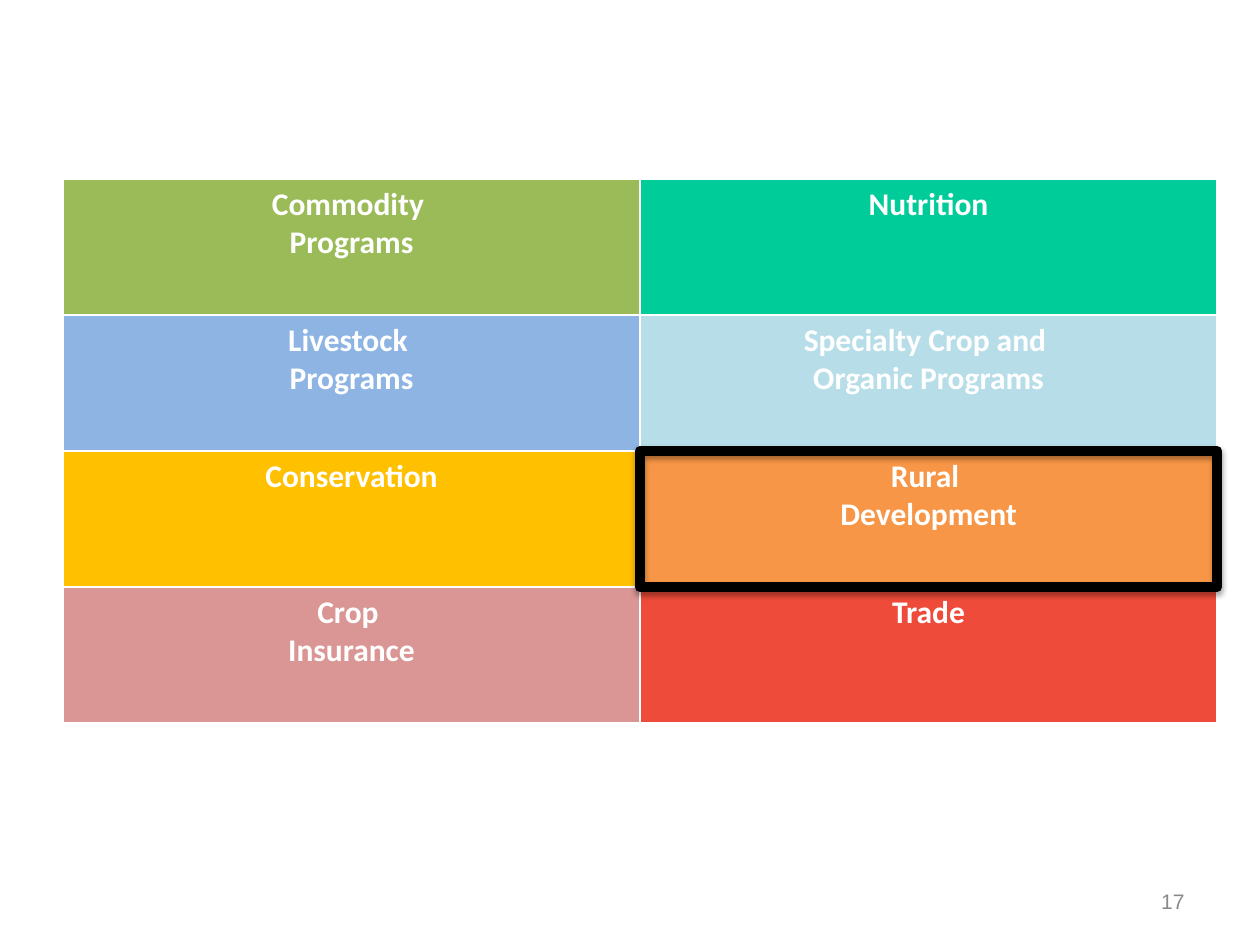
from lxml import etree
from pptx import Presentation
from pptx import util as u
from pptx.dml.color import RGBColor
from pptx.enum import shapes, text
from pptx.oxml import ns

COLORS = {
    "commodity": "9BBB59", "nutrition": "00CC99",
    "livestock": "8EB4E3", "specialty": "B7DEE8",
    "conservation": "FFC000", "rural": "F79646",
    "insurance": "D99694", "trade": "EE4B3A",
    "label": "FFFFFF", "highlight": "000000", "number": "898989",
}
PROGRAMS = [
    [("Commodity \nPrograms", "commodity"), ("Nutrition", "nutrition")],
    [("Livestock \nPrograms", "livestock"),
     ("Specialty Crop and \nOrganic Programs", "specialty")],
    [("Conservation", "conservation"), ("Rural \nDevelopment", "rural")],
    [("Crop \nInsurance", "insurance"), ("Trade", "trade")],
]
LEFT, TOP = u.Inches(0.5), u.Inches(1.42)
CELL_WIDTH, CELL_HEIGHT = u.Inches(4.58), u.Inches(1.08)


def color(name):
    """Return the named colour."""
    return RGBColor.from_string(COLORS[name])


def format_text(frame, font_name, size, color_name, align, bold=False):
    """Format every paragraph of a text frame alike."""
    for paragraph in frame.paragraphs:
        paragraph.alignment = align
        for run in paragraph.runs:
            run.font.name = font_name
            run.font.size = u.Pt(size)
            run.font.bold = bold
            run.font.color.rgb = color(color_name)


def add_program_table(slide):
    """Add the coloured grid of programs."""
    rows, columns = len(PROGRAMS), len(PROGRAMS[0])
    grid = slide.shapes.add_table(rows, columns, LEFT, TOP,
                                  CELL_WIDTH * columns, CELL_HEIGHT * rows).table
    grid.horz_banding = False
    for row, programs in enumerate(PROGRAMS):
        for column, (title, fill) in enumerate(programs):
            cell = grid.cell(row, column)
            cell.fill.solid()
            cell.fill.fore_color.rgb = color(fill)
            cell.text_frame.text = title
            format_text(cell.text_frame, "Calibri", 18, "label",
                        text.PP_ALIGN.CENTER, bold=True)


def add_highlight(slide, row, column):
    """Frame one cell of the grid with a heavy, softly shadowed outline."""
    frame = slide.shapes.add_shape(
        shapes.MSO_SHAPE.RECTANGLE, LEFT + CELL_WIDTH * column,
        TOP + CELL_HEIGHT * row, CELL_WIDTH, CELL_HEIGHT)
    frame.fill.background()
    frame.line.color.rgb = color("highlight")
    frame.line.width = u.Pt(5.75)
    frame.shadow.inherit = False
    effects = frame.element.spPr.find(ns.qn("a:effectLst"))
    shadow = etree.SubElement(effects, ns.qn("a:outerShdw"), blurRad="40000",
                              dist="23000", dir="5400000", rotWithShape="0")
    tint = etree.SubElement(shadow, ns.qn("a:srgbClr"), val=COLORS["highlight"])
    etree.SubElement(tint, ns.qn("a:alpha"), val="35000")


def add_page_number(slide, number):
    """Add the page number at the lower right."""
    box = slide.shapes.add_textbox(u.Inches(7.17), u.Inches(6.95),
                                   u.Inches(2.33), u.Inches(0.4))
    frame = box.text_frame
    frame.word_wrap = True
    frame.vertical_anchor = text.MSO_ANCHOR.MIDDLE
    frame.text = number
    format_text(frame, "Arial", 12, "number", text.PP_ALIGN.RIGHT)


def main():
    """Build and save the slide."""
    deck = Presentation()
    deck.slide_width, deck.slide_height = u.Inches(10), u.Inches(7.5)
    slide = deck.slides.add_slide(deck.slide_layouts[6])
    add_page_number(slide, "17")
    add_program_table(slide)
    add_highlight(slide, row=2, column=1)
    deck.save("out.pptx")


if __name__ == "__main__":
    main()
